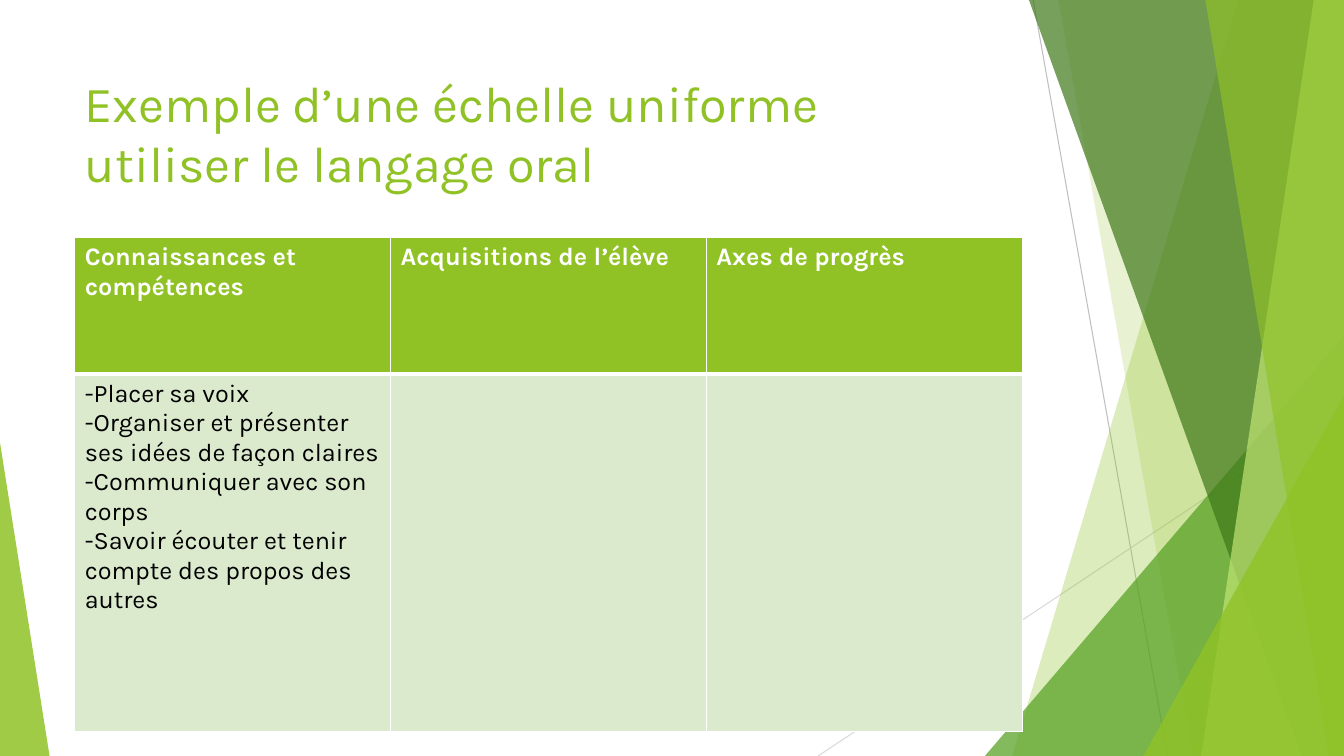
from lxml import etree
from pptx import Presentation
from pptx.dml.color import RGBColor
from pptx.enum.shapes import MSO_CONNECTOR, MSO_SHAPE
from pptx.enum.text import MSO_ANCHOR
from pptx.oxml.ns import qn
from pptx.util import Emu, Pt

STRAIGHT = MSO_CONNECTOR.STRAIGHT
TRIANGLE = MSO_SHAPE.ISOSCELES_TRIANGLE
TOP = MSO_ANCHOR.TOP

# The slide is a grid of 160 columns by 90 rows of square units
COLUMNS, ROWS, UNIT = 160, 90, 76200
FONT = "Karla"
COLORS = {
    "lime": "90C226", "green": "54A021", "forest": "3F7819", "pale": "C0E474",
    "mint": "DBE9CD", "white": "FFFFFF", "black": "000000",
    "gray": "BFBFBF", "silver": "D9D9D9",
}


def grid(*lengths):
    return [Emu(round(length * UNIT)) for length in lengths]


def color(name):
    return RGBColor.from_string(COLORS[name])


def write(frame, text, size=18, ink="black", bold=False):
    """Fill a text frame: one paragraph per line, line breaks at \\v."""
    frame.word_wrap = True
    frame.text = text
    for para in frame.paragraphs:
        for span in para.runs:
            span.font.name = FONT
            span.font.size = Pt(size)
            span.font.bold = bold
            span.font.color.rgb = color(ink)


class SlideBuilder:
    def __init__(self, deck):
        self.page = deck.slides.add_slide(deck.slide_layouts[6])
        self.shapes = self.page.shapes

    def paint(self, shape, fill, opacity):
        shape.shadow.inherit = False
        shape.line.fill.background()
        shape.fill.solid()
        shape.fill.fore_color.rgb = color(fill)
        tint = shape.fill._xPr.find(qn("a:solidFill"))[0]
        etree.SubElement(tint, qn("a:alpha"), val=str(opacity * 1000))

    def line(self, start, end, ink):
        line = self.shapes.add_connector(STRAIGHT, *grid(*start, *end))
        line.line.color.rgb = color(ink)
        line.line.width = Pt(0.75)
        etree.SubElement(line._element.spPr, qn("a:effectLst"))

    def band(self, top_left, bottom_left, fill, opacity):
        """Full-height band running to the right edge of the slide."""
        outline = self.shapes.build_freeform(*grid(top_left, 0))
        corners = [(COLUMNS, 0), (COLUMNS, ROWS), (bottom_left, ROWS)]
        outline.add_line_segments([grid(*corner) for corner in corners])
        self.paint(outline.convert_to_shape(), fill, opacity)

    def triangle(self, left, top, width, apex, fill, opacity):
        """Triangle standing on the bottom edge of the slide."""
        shape = self.shapes.add_shape(TRIANGLE, *grid(left, top, width, ROWS - top))
        shape.adjustments[0] = apex
        self.paint(shape, fill, opacity)

    def title(self, left, top, width, height, text):
        box = self.shapes.add_textbox(*grid(left, top, width, height))
        box.text_frame.vertical_anchor = TOP
        write(box.text_frame, text, size=36, ink="lime")

    def borders(self, cell, **widths):
        properties = cell._tc.get_or_add_tcPr()
        for place, side in enumerate("LRTB"):
            edge = etree.Element(qn(f"a:ln{side}"), w=str(Pt(widths.get(side, 1))))
            fill = etree.SubElement(edge, qn("a:solidFill"))
            etree.SubElement(fill, qn("a:srgbClr"), val=COLORS["white"])
            properties.insert(place, edge)

    def table(self, left, top, width, heights, rows):
        count = len(rows[0])
        frame = self.shapes.add_table(
            len(rows), count, *grid(left, top, width, sum(heights)))
        table = frame.table
        for column in table.columns:
            column.width = grid(width / count)[0]
        for index, (height, texts) in enumerate(zip(heights, rows)):
            table.rows[index].height = grid(height)[0]
            header = index == 0
            for cell, text in zip(table.rows[index].cells, texts):
                cell.fill.solid()
                cell.fill.fore_color.rgb = color("lime" if header else "mint")
                self.borders(cell, **({"B": 3} if header else {"T": 3}))
                write(cell.text_frame, text, bold=header,
                      ink="white" if header else "black")


def main():
    deck = Presentation()
    deck.slide_width, deck.slide_height = grid(COLUMNS, ROWS)
    slide = SlideBuilder(deck)

    # Decoration: thin lines, then overlapping green facets
    slide.line((123, 0), (139, ROWS), "gray")
    slide.line((COLUMNS, 48.33), (97.4, ROWS), "silver")
    slide.band(147.4, 120.5, "lime", 30)
    slide.band(126, 142, "lime", 20)
    slide.triangle(117.25, 40, 42.75, 1, "green", 72)
    slide.band(122.5, 154.95, "forest", 70)
    slide.band(156.4, 143, "pale", 70)
    slide.band(143.5, 158.2, "lime", 65)
    slide.triangle(136.1, 47.15, 23.9, 1, "lime", 80)
    slide.triangle(0, 52.7, 5.9, 0, "lime", 85)

    # Title
    slide.title(8.9, 8, 112.8, 17.3,
                "Exemple d’une échelle uniforme\vutiliser le langage oral")

    # Assessment table
    skills = "\n".join([
        "-Placer sa voix",
        "-Organiser et présenter ses idées de façon claires",
        "-Communiquer avec son corps",
        "-Savoir écouter et tenir compte des propos des autres",
    ])
    slide.table(8.9, 28.3, 112.8, [16.2, 42.6], [
        ["Connaissances et compétences", "Acquisitions de l’élève", "Axes de progrès"],
        [skills, "", ""],
    ])

    deck.save("out.pptx")


if __name__ == "__main__":
    main()
